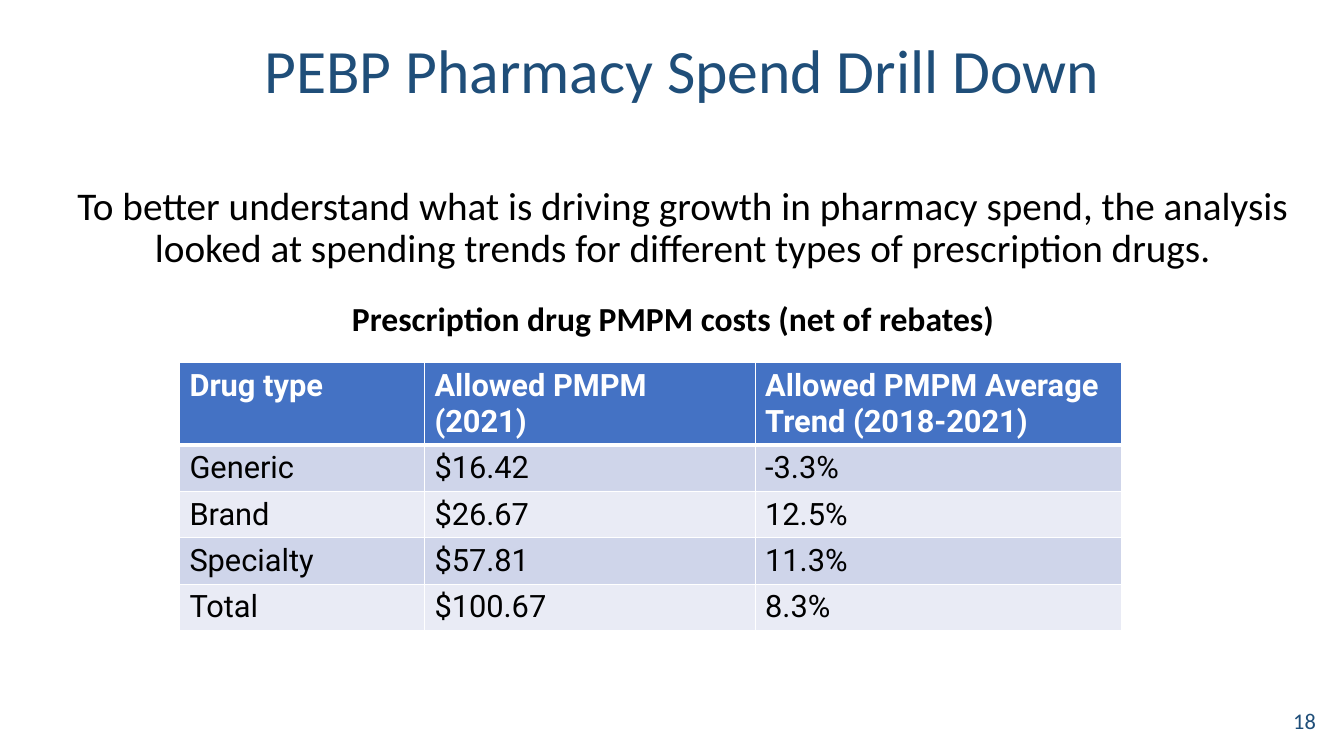
from dataclasses import dataclass

from lxml.etree import SubElement
from pptx import Presentation
from pptx.dml.color import RGBColor
from pptx.enum.text import MSO_ANCHOR as Anchor, MSO_AUTO_SIZE as AutoSize, PP_ALIGN as Align
from pptx.oxml.ns import qn
from pptx.util import Inches, Pt

COLORS = {
    "navy": "1F4E79",
    "black": "000000",
    "white": "FFFFFF",
    "header": "4472C4",
    "band_dark": "CFD5EA",
    "band_light": "E9EBF5",
}


@dataclass(frozen=True)
class Box:
    """Position and size in inches."""

    left: float
    top: float
    width: float
    height: float

    def lengths(self):
        """Return the four values as lengths."""
        return [Inches(value) for value in (self.left, self.top, self.width, self.height)]


@dataclass(frozen=True)
class DrugRow:
    """One line of the cost table."""

    drug_type: str
    allowed: str
    trend: str

    def texts(self) -> tuple[str, str, str]:
        """Return the cell texts in column order."""
        return self.drug_type, self.allowed, self.trend


TITLE_BOX = Box(0.39, 0, 12.76, 1.45)
BODY_BOX = Box(0.39, 1.8, 12.76, 5.35)
NUMBER_BOX = Box(10.15, 6.95, 3, 0.4)
TABLE_BOX = Box(1.78, 3.6, 9.34, 2.7)
COLUMN_WIDTHS = (2.43, 3.28, 3.63)
ROW_HEIGHT = 0.41
DRUG_ROWS = (
    DrugRow("Drug type", "Allowed PMPM (2021)", "Allowed PMPM Average Trend (2018-2021)"),
    DrugRow("Generic", "$16.42", "-3.3%"),
    DrugRow("Brand", "$26.67", "12.5%"),
    DrugRow("Specialty", "$57.81", "11.3%"),
    DrugRow("Total", "$100.67", "8.3%"),
)


def color(name: str) -> RGBColor:
    """Look up a colour by name."""
    return RGBColor.from_string(COLORS[name])


def write(paragraph, text: str, *, size: float, ink: str = "black", font: str = "Calibri",
          bold: bool = False, align=Align.LEFT, spacing: float = 1.0,
          before: float = 0, after: float = 0) -> None:
    """Add formatted text to a paragraph."""
    paragraph.alignment = align
    paragraph.line_spacing = spacing
    paragraph.space_before = Pt(before)
    paragraph.space_after = Pt(after)
    run = paragraph.add_run()
    run.text = text
    run.font.size = Pt(size)
    run.font.name = font
    run.font.bold = bold
    run.font.color.rgb = color(ink)


def prepare(shape, box: Box, anchor):
    """Place a text shape and return its text frame."""
    shape.left, shape.top, shape.width, shape.height = box.lengths()
    frame = shape.text_frame
    frame.word_wrap = True
    frame.auto_size = AutoSize.NONE
    frame.vertical_anchor = anchor
    return frame


def remove_bullet(paragraph, indent: float = 0) -> None:
    """Turn off the bullet and set the left indent in inches."""
    properties = paragraph._p.get_or_add_pPr()
    properties.set("marL", str(Inches(indent)))
    properties.set("indent", "0")
    SubElement(properties, qn("a:buNone"))


def add_borders(cell, widths: dict[str, float]) -> None:
    """Draw white borders of the given point widths around a cell."""
    properties = cell._tc.get_or_add_tcPr()
    for position, (side, width) in enumerate(widths.items()):
        line = SubElement(properties, qn(f"a:ln{side}"), w=str(Pt(width)))
        fill = SubElement(line, qn("a:solidFill"))
        SubElement(fill, qn("a:srgbClr"), val=COLORS["white"])
        properties.insert(position, line)


def add_body(shape) -> None:
    """Fill the body with the introduction and the table caption."""
    frame = prepare(shape, BODY_BOX, Anchor.TOP)
    introduction, caption = frame.paragraphs[0], frame.add_paragraph()
    write(introduction, "To better understand what is driving growth in pharmacy spend, the analysis "
          "looked at spending trends for different types of prescription drugs.",
          size=28, align=Align.CENTER, spacing=0.9, before=10, after=12)
    write(caption, "Prescription drug PMPM costs (net of rebates)",
          size=24, bold=True, spacing=0.9, before=10)
    remove_bullet(introduction)
    remove_bullet(caption, indent=3)


def add_cost_table(slide) -> None:
    """Add the banded table of drug costs."""
    shape = slide.shapes.add_table(len(DRUG_ROWS), len(COLUMN_WIDTHS), *TABLE_BOX.lengths())
    table = shape.table
    for column, width in zip(table.columns, COLUMN_WIDTHS):
        column.width = Inches(width)
    for row_index, drug_row in enumerate(DRUG_ROWS):
        table.rows[row_index].height = Inches(ROW_HEIGHT)
        is_header = row_index == 0
        band = "header" if is_header else ("band_light", "band_dark")[row_index % 2]
        borders = {"L": 1, "R": 1, "T": 3 if row_index == 1 else 1, "B": 3 if is_header else 1}
        for column_index, text in enumerate(drug_row.texts()):
            cell = table.cell(row_index, column_index)
            cell.fill.solid()
            cell.fill.fore_color.rgb = color(band)
            write(cell.text_frame.paragraphs[0], text, size=22, font="Roboto",
                  ink="white" if is_header else "black", bold=is_header)
            add_borders(cell, borders)
    shape.height = Inches(TABLE_BOX.height)


def main() -> None:
    """Build and save the presentation."""
    presentation = Presentation()
    presentation.slide_width, presentation.slide_height = Inches(13.33), Inches(7.5)
    slide = presentation.slides.add_slide(presentation.slide_layouts[1])
    add_body(slide.placeholders[1])
    number = slide.shapes.add_textbox(*NUMBER_BOX.lengths())
    write(prepare(number, NUMBER_BOX, Anchor.MIDDLE).paragraphs[0], "18",
          size=16, ink="navy", align=Align.RIGHT)
    title = prepare(slide.shapes.title, TITLE_BOX, Anchor.MIDDLE)
    write(title.paragraphs[0], "PEBP Pharmacy Spend Drill Down",
          size=44, ink="navy", align=Align.CENTER, spacing=0.9)
    add_cost_table(slide)
    presentation.save("out.pptx")


if __name__ == "__main__":
    main()
